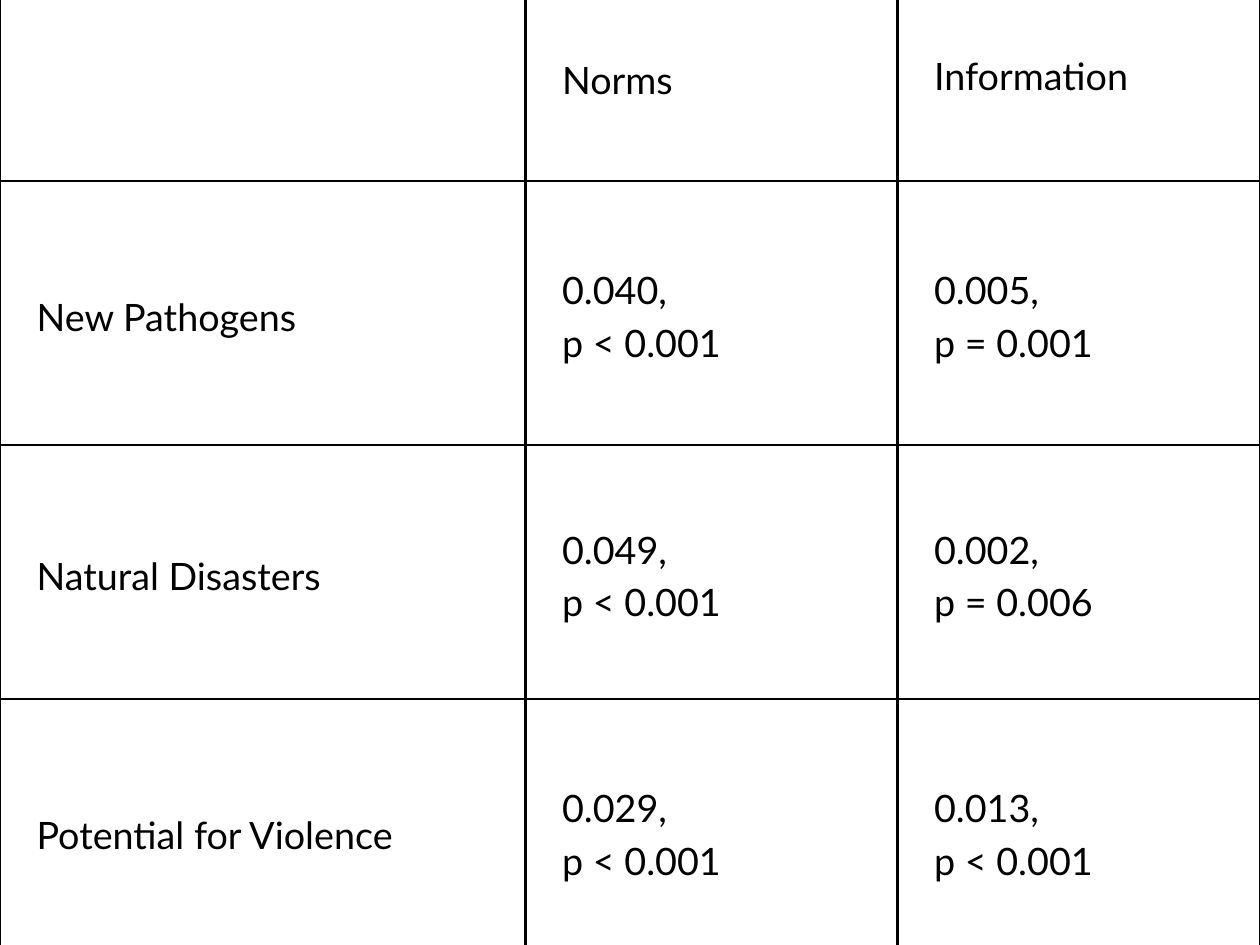
from dataclasses import dataclass

from pptx import Presentation
from pptx.dml.color import RGBColor
from pptx.enum.text import MSO_ANCHOR
from pptx.oxml import parse_xml
from pptx.oxml.ns import nsdecls
from pptx.table import _Cell
from pptx.util import Inches, Pt

BLACK = RGBColor(0x00, 0x00, 0x00)
FONT_FORMAT = {"name": "Lato", "size": Pt(23), "bold": False}
LINE_SPACING = Pt(32.2)
BORDER_WIDTH = Pt(1.5)

CELL_FORMAT = {
    "margin_left": Inches(0.31),
    "margin_right": Inches(0.18),
    "margin_top": Inches(0.18),
    "margin_bottom": Inches(0.18),
    "vertical_anchor": MSO_ANCHOR.MIDDLE,
}
# The last heading hangs from the top, one line down
TOP_FORMAT = {"vertical_anchor": MSO_ANCHOR.TOP, "margin_top": Inches(0.63)}

COLUMN_WIDTHS = (4.45, 3.15, 3.07)
ROW_HEIGHTS = (1.77, 2.24, 2.15, 2.23)
TABLE_TOP = -0.24


@dataclass
class Effect:
    threat: str
    norms: tuple[str, str]
    information: tuple[str, str]


EFFECTS = [
    Effect("New Pathogens", ("0.040,", "p < 0.001"), ("0.005,", "p = 0.001")),
    Effect("Natural Disasters", ("0.049,", "p < 0.001"), ("0.002,", "p = 0.006")),
    Effect("Potential for Violence", ("0.029,", "p < 0.001"), ("0.013,", "p < 0.001")),
]


def add_borders(cell: _Cell) -> None:
    """Draw a solid line on all four sides of the cell."""
    properties = cell._tc.get_or_add_tcPr()
    for side in ("lnL", "lnR", "lnT", "lnB"):
        properties.append(parse_xml(
            f'<a:{side} {nsdecls("a")} w="{BORDER_WIDTH}"><a:solidFill>'
            f'<a:srgbClr val="{BLACK}"/></a:solidFill></a:{side}>'
        ))


def fill_cell(cell: _Cell, lines: tuple[str, ...], cell_format: dict) -> None:
    """Write one paragraph per line and format the cell."""
    for name, value in cell_format.items():
        setattr(cell, name, value)
    add_borders(cell)
    cell.fill.background()
    cell.text_frame.text = "\n".join(lines)
    for paragraph in cell.text_frame.paragraphs:
        paragraph.line_spacing = LINE_SPACING
        for name, value in FONT_FORMAT.items():
            setattr(paragraph.font, name, value)
        paragraph.font.color.rgb = BLACK


def main() -> None:
    presentation = Presentation()
    presentation.slide_width, presentation.slide_height = Inches(10.67), Inches(8)
    slide = presentation.slides.add_slide(presentation.slide_layouts[6])

    # Table grid
    table = slide.shapes.add_table(
        len(ROW_HEIGHTS), len(COLUMN_WIDTHS), Inches(0), Inches(TABLE_TOP),
        Inches(sum(COLUMN_WIDTHS)), Inches(sum(ROW_HEIGHTS)),
    ).table
    table.first_row = table.horz_banding = False
    for column, width in zip(table.columns, COLUMN_WIDTHS):
        column.width = Inches(width)
    for row, height in zip(table.rows, ROW_HEIGHTS):
        row.height = Inches(height)

    # Headings, then one row per threat
    contents = [((), ("Norms",), ("Information",))]
    contents += [((effect.threat,), effect.norms, effect.information) for effect in EFFECTS]
    for row, row_contents in zip(table.rows, contents):
        for cell, lines in zip(row.cells, row_contents):
            hangs = lines == ("Information",)
            fill_cell(cell, lines, CELL_FORMAT | TOP_FORMAT if hangs else CELL_FORMAT)

    presentation.save("out.pptx")


if __name__ == "__main__":
    main()
